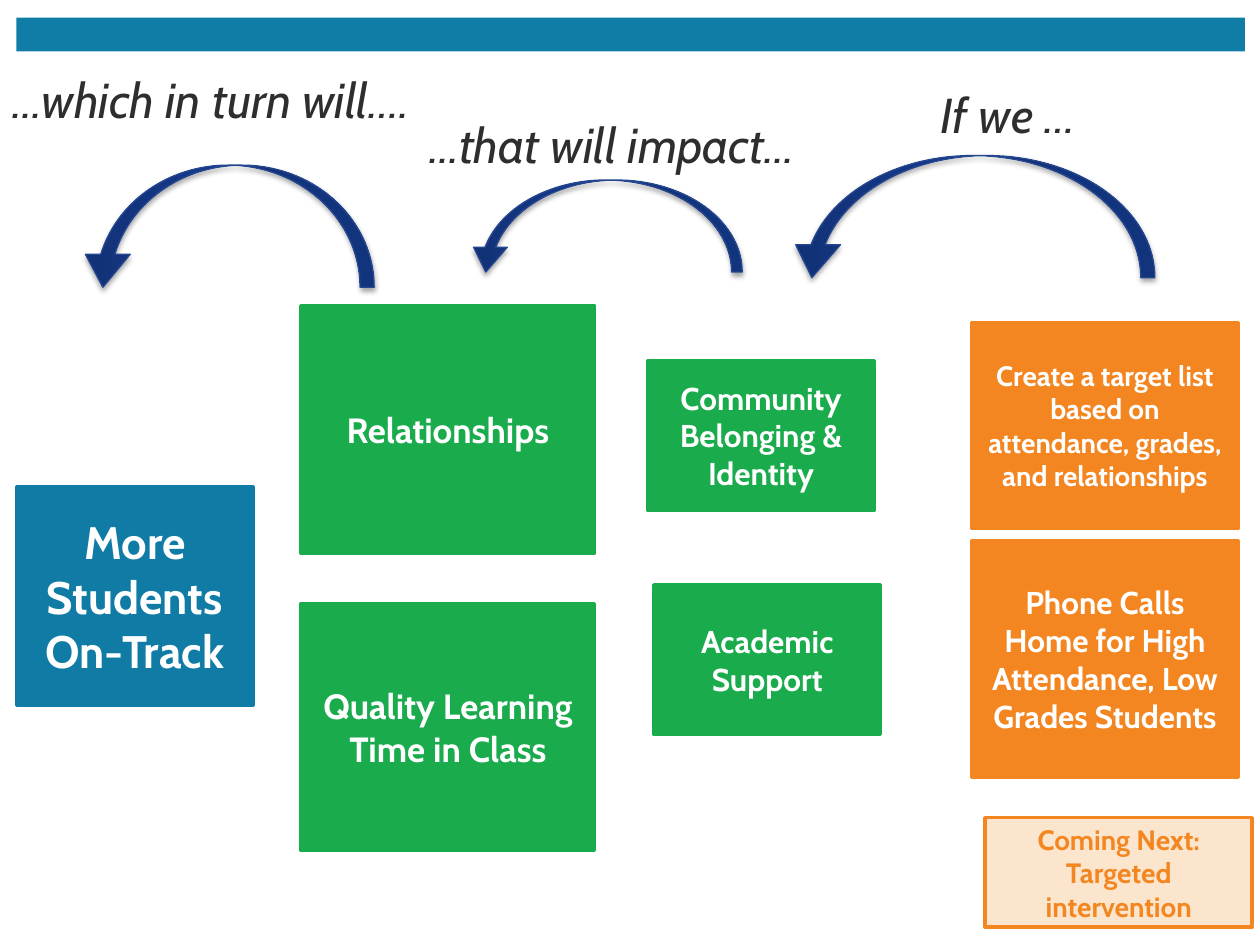
from copy import deepcopy
from dataclasses import dataclass

from lxml.etree import SubElement
from pptx import Presentation
from pptx.dml.color import RGBColor
from pptx.enum.shapes import MSO_SHAPE
from pptx.enum.text import MSO_ANCHOR, PP_ALIGN
from pptx.oxml.ns import qn
from pptx.util import Pt

BLUE, GREEN, ORANGE, CREAM = "107CA6", "19AB4C", "F38620", "FCE5CD"
WHITE, CHARCOAL = "FFFFFF", "2E2E2E"
ARROW_STOPS = [(0, "123176"), (0.8, "17419C"), (1, "15409E")]

# Column left edges and widths, shared by the boxes of each column
MIDDLE_LEFT, MIDDLE_WIDTH, MIDDLE_HEIGHT = 172.1, 167.8, 141.1
IMPACT_WIDTH, IMPACT_HEIGHT = 129.6, 85.7
ACTION_LEFT, ACTION_WIDTH = 555.1, 152.6


@dataclass
class Frame:
    left: float
    top: float
    width: float
    height: float

    def lengths(self) -> list:
        return [Pt(value) for value in (self.left, self.top, self.width, self.height)]


@dataclass
class Box:
    text: str
    frame: Frame
    fill: str
    size: float
    line: str = ""
    color: str = WHITE


@dataclass
class Label:
    text: str
    frame: Frame


def rgb(color: str) -> RGBColor:
    return RGBColor.from_string(color)


def write(shape, text: str, *, size: float, color: str, bold: bool = False,
          italic: bool = False, align=PP_ALIGN.LEFT, anchor=MSO_ANCHOR.TOP) -> None:
    frame = shape.text_frame
    frame.word_wrap = True
    frame.vertical_anchor = anchor
    para = frame.paragraphs[0]
    para.alignment = align
    span = para.add_run()
    span.text = text
    font = span.font
    font.name, font.size, font.bold, font.italic = "Cabin", Pt(size), bold, italic
    font.color.rgb = rgb(color)


def draw_rectangle(page, frame: Frame, fill: str, line: str = ""):
    shape = page.shapes.add_shape(MSO_SHAPE.RECTANGLE, *frame.lengths())
    shape.shadow.inherit = False
    shape.fill.solid()
    shape.fill.fore_color.rgb = rgb(fill)
    if line:
        shape.line.color.rgb = rgb(line)
        shape.line.width = Pt(2)
    else:
        shape.line.fill.background()
    return shape


def draw_box(page, box: Box) -> None:
    shape = draw_rectangle(page, box.frame, box.fill, box.line or box.fill)
    write(shape, box.text, size=box.size, color=box.color, bold=True,
          align=PP_ALIGN.CENTER, anchor=MSO_ANCHOR.MIDDLE)


def draw_label(page, label: Label) -> None:
    shape = page.shapes.add_textbox(*label.frame.lengths())
    write(shape, label.text, size=28, color=CHARCOAL, italic=True)


def draw_arrow(page, frame: Frame) -> None:
    """Draw a curved arrow, turned so that it arches from right to left."""
    arrow = page.shapes.add_shape(MSO_SHAPE.CURVED_RIGHT_ARROW, *frame.lengths())
    arrow.rotation = 90
    for index, value in enumerate((0.115, 0.367, 0.27)):
        arrow.adjustments[index] = value
    arrow.line.color.rgb = rgb("254790")
    arrow.line.width = Pt(0.75)

    # Gradient with one stop more than the default two
    arrow.fill.gradient()
    arrow.fill.gradient_angle = 90
    properties = arrow._element.spPr
    stop_list = properties.find(qn("a:gradFill")).find(qn("a:gsLst"))
    stop_list.append(deepcopy(stop_list[-1]))
    for stop, (position, color) in zip(arrow.fill.gradient_stops, ARROW_STOPS):
        stop.position = position
        stop.color.rgb = rgb(color)

    # Soft shadow below
    arrow.shadow.inherit = False
    shadow = SubElement(properties.find(qn("a:effectLst")), qn("a:outerShdw"),
                        blurRad=str(Pt(3.1)), dist=str(Pt(1.8)), dir="5400000",
                        rotWithShape="0")
    shade = SubElement(shadow, qn("a:srgbClr"), val="000000")
    SubElement(shade, qn("a:alpha"), val="35000")


ARROWS = [
    Frame(520.6, 19.4, 69.8, 208.8),
    Frame(95, 45.4, 69.8, 167.8),
    Frame(319.7, 51.1, 52.6, 156.2),
]

BOXES = [
    # Goal
    Box("More Students On-Track", Frame(9.4, 277.9, 135.4, 125.3), BLUE, 26),
    # Conditions for the goal
    Box("Relationships",
        Frame(MIDDLE_LEFT, 175, MIDDLE_WIDTH, MIDDLE_HEIGHT), GREEN, 20),
    Box("Quality Learning Time in Class",
        Frame(MIDDLE_LEFT, 344.9, MIDDLE_WIDTH, MIDDLE_HEIGHT), GREEN, 20),
    # Areas of impact
    Box("Community Belonging & Identity",
        Frame(370.1, 205.9, IMPACT_WIDTH, IMPACT_HEIGHT), GREEN, 18),
    Box("Academic Support",
        Frame(373.7, 334.1, IMPACT_WIDTH, IMPACT_HEIGHT), GREEN, 18),
    # Actions
    Box("Create a target list based on attendance, grades, and relationships",
        Frame(ACTION_LEFT, 184.3, ACTION_WIDTH, 117.4), ORANGE, 16),
    Box("Phone Calls Home for High Attendance, Low Grades Students",
        Frame(ACTION_LEFT, 308.9, ACTION_WIDTH, 135.4), ORANGE, 18),
    Box("Coming Next: Targeted intervention",
        Frame(563, 467.3, ACTION_WIDTH, 62.6), CREAM, 16, line=ORANGE, color=ORANGE),
]

LABELS = [
    Label("If we …", Frame(530.6, 44.6, 157, 41)),
    Label("...that will impact...", Frame(238.3, 61.9, 267.1, 41)),
    Label("...which in turn will….", Frame(0, 36, 282.2, 41)),
]


def main() -> None:
    deck = Presentation()
    deck.slide_width, deck.slide_height = Pt(720), Pt(540)
    page = deck.slides.add_slide(deck.slide_layouts[6])

    # Header bar
    draw_rectangle(page, Frame(9.4, 10.1, 702, 19.4), "107DA6")

    # Chain of causes, read from right to left
    for frame in ARROWS:
        draw_arrow(page, frame)
    for box in BOXES:
        draw_box(page, box)
    for label in LABELS:
        draw_label(page, label)

    deck.save("out.pptx")


if __name__ == "__main__":
    main()
